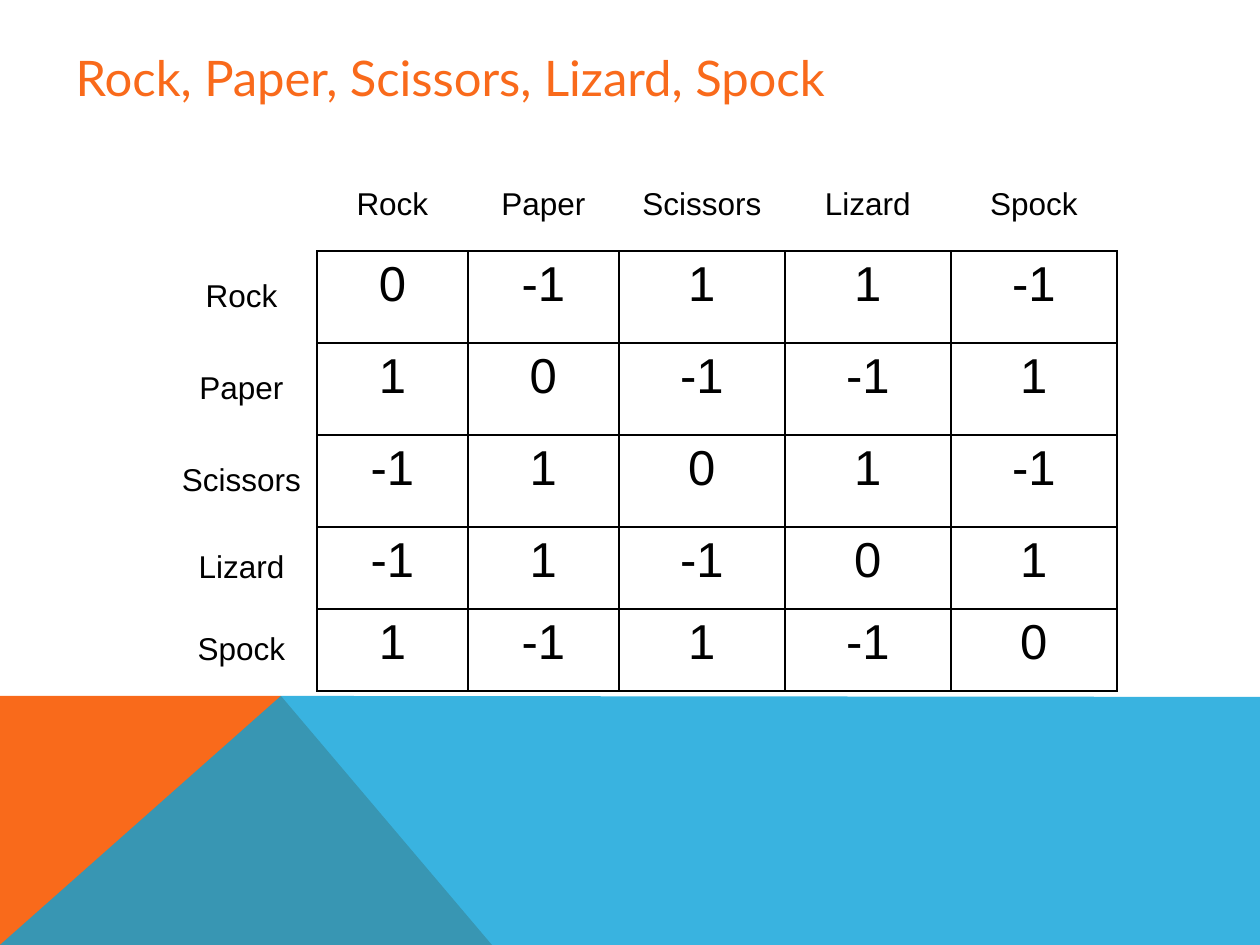
from dataclasses import dataclass
from lxml import etree
from pptx import Presentation
from pptx import util as u
from pptx.dml.color import RGBColor
from pptx.enum import text
from pptx.oxml import ns

PX = 914400 / 126


@dataclass(frozen=True)
class Theme:
    orange: str = "F96A1B"
    blue: str = "08A1D9"
    black: str = "000000"
    head: str = "Lato"
    body: str = "Arial"
    big: int = 28
    small: int = 18


@dataclass(frozen=True)
class Band:
    points: tuple[tuple[int, int], ...]
    color: str
    alpha: int = 100


THEME = Theme()
BANDS = (
    Band(((0, 945), (0, 696), (281, 696), (492, 945)), THEME.orange),
    Band(((0, 945), (281, 696), (1260, 697), (1260, 945)), THEME.blue, 80),
)
MOVES = ("Rock", "Paper", "Scissors", "Lizard", "Spock")
SCORES = (
    (0, -1, 1, 1, -1),
    (1, 0, -1, -1, 1),
    (-1, 1, 0, 1, -1),
    (-1, 1, -1, 0, 1),
    (1, -1, 1, -1, 0),
)
WIDTHS = (151,) * 3 + (166,) * 3
HEIGHTS = (92,) * 4 + (82,) * 2


def emu(px: int) -> int:
    return round(px * PX)


def style(frame, face: str, size: int, color: str) -> None:
    for part in frame.paragraphs:
        for run in part.runs:
            run.font.name = face
            run.font.size = u.Pt(size)
            run.font.color.rgb = RGBColor.from_string(color)


def draw_band(slide, band: Band) -> None:
    first, *rest = band.points
    pen = slide.shapes.build_freeform(*first, scale=PX)
    pen.add_line_segments(rest, close=True)
    shape = pen.convert_to_shape()
    shape.shadow.inherit = False
    shape.line.fill.background()
    shape.fill.solid()
    shape.fill.fore_color.rgb = RGBColor.from_string(band.color)
    if band.alpha < 100:
        tint = shape.fill._xPr.find(".//" + ns.qn("a:srgbClr"))
        etree.SubElement(tint, ns.qn("a:alpha"), val=str(band.alpha * 1000))


def set_edges(cell, sides: str) -> None:
    """Rule the sides named by letter and clear the others."""
    props = cell._tc.get_or_add_tcPr()
    for spot, side in enumerate("LRTB"):
        line = etree.Element(ns.qn("a:ln" + side), w=str(u.Pt(1)))
        if side in sides:
            fill = etree.SubElement(line, ns.qn("a:solidFill"))
            etree.SubElement(fill, ns.qn("a:srgbClr"), val=THEME.black)
        else:
            etree.SubElement(line, ns.qn("a:noFill"))
        props.insert(spot, line)


def fill_cell(cell, words: str, label: bool, sides: str) -> None:
    cell.fill.background()
    set_edges(cell, sides)
    cell.text_frame.text = words
    cell.text_frame.paragraphs[0].alignment = text.PP_ALIGN.CENTER
    cell.vertical_anchor = text.MSO_ANCHOR.MIDDLE if label else text.MSO_ANCHOR.TOP
    size = THEME.small if label else THEME.big
    style(cell.text_frame, THEME.body, size, THEME.black)


def draw_table(slide, left: int, top: int) -> None:
    frame = slide.shapes.add_table(
        len(HEIGHTS), len(WIDTHS), emu(left), emu(top),
        emu(sum(WIDTHS)), emu(sum(HEIGHTS)))
    table = frame.table
    table.first_row = table.horz_banding = False
    for col, width in zip(table.columns, WIDTHS):
        col.width = emu(width)
    for row, height in zip(table.rows, HEIGHTS):
        row.height = emu(height)

    # Move names along the top and the left
    fill_cell(table.cell(0, 0), "", True, "")
    for i, name in enumerate(MOVES, 1):
        fill_cell(table.cell(0, i), name, True, "B")
        fill_cell(table.cell(i, 0), name, True, "R")

    # Scores
    for r, line in enumerate(SCORES, 1):
        for c, score in enumerate(line, 1):
            fill_cell(table.cell(r, c), str(score), False, "LRTB")


def draw_title(slide, words: str) -> None:
    title = slide.shapes.title
    title.left, title.top = emu(63), emu(38)
    title.width, title.height = emu(1134), emu(78)
    frame = title.text_frame
    frame.text = words
    frame.word_wrap = True
    frame.vertical_anchor = text.MSO_ANCHOR.MIDDLE
    frame.paragraphs[0].alignment = text.PP_ALIGN.LEFT
    style(frame, THEME.head, THEME.big, THEME.orange)


def main() -> None:
    deck = Presentation()
    deck.slide_width, deck.slide_height = emu(1260), emu(945)
    slide = deck.slides.add_slide(deck.slide_layouts[5])
    for band in BANDS:
        draw_band(slide, band)
    draw_title(slide, ", ".join(MOVES))
    draw_table(slide, 166, 159)
    deck.save("out.pptx")


if __name__ == "__main__":
    main()
